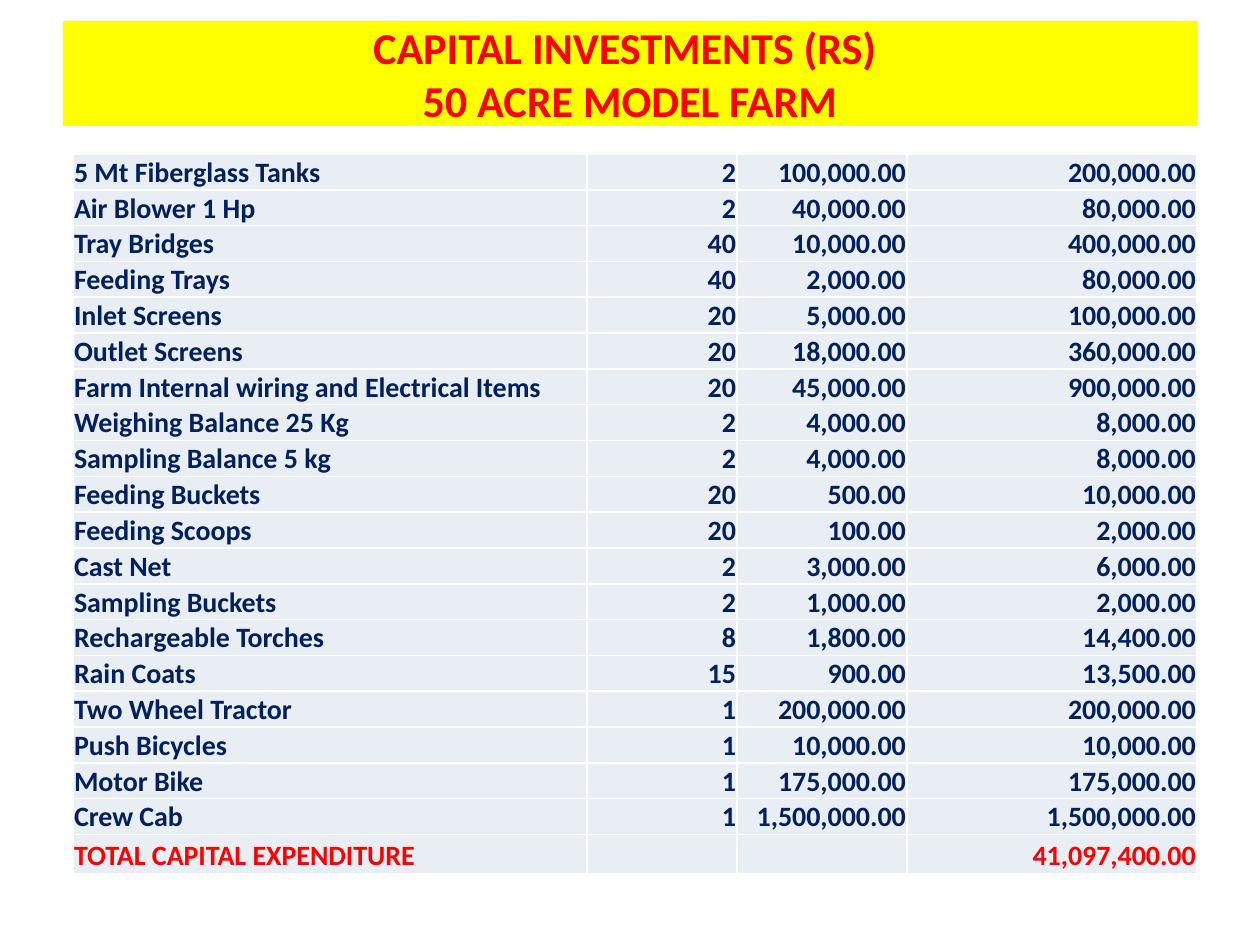
"""Build the capital investments slide for the 50 acre model farm."""
from pptx import Presentation
from pptx.dml.color import RGBColor
from pptx.enum.text import MSO_ANCHOR, PP_ALIGN
from pptx.util import Pt

LEFT, MID, RIGHT = PP_ALIGN.LEFT, PP_ALIGN.CENTER, PP_ALIGN.RIGHT
CENTER, BOTTOM = MSO_ANCHOR.MIDDLE, MSO_ANCHOR.BOTTOM
YELLOW = RGBColor(0xFF, 0xFF, 0x00)
RED = RGBColor(0xFF, 0x00, 0x00)
NAVY = RGBColor(0x00, 0x20, 0x60)
PALE = RGBColor(0xE9, 0xED, 0xF4)
SCALE = 914400 / 126


def px(n):
    return round(n * SCALE)


def style(para, size, color, align):
    para.alignment = align
    for run in para.runs:
        for key, val in {"name": "Calibri", "size": Pt(size), "bold": True}.items():
            setattr(run.font, key, val)
        run.font.color.rgb = color


ROWS = [
    ("5 Mt Fiberglass Tanks", "2", "100,000.00", "200,000.00"),
    ("Air Blower 1 Hp", "2", "40,000.00", "80,000.00"),
    ("Tray Bridges", "40", "10,000.00", "400,000.00"),
    ("Feeding Trays", "40", "2,000.00", "80,000.00"),
    ("Inlet Screens", "20", "5,000.00", "100,000.00"),
    ("Outlet Screens", "20", "18,000.00", "360,000.00"),
    ("Farm Internal wiring and Electrical Items", "20", "45,000.00", "900,000.00"),
    ("Weighing Balance 25 Kg", "2", "4,000.00", "8,000.00"),
    ("Sampling Balance 5 kg", "2", "4,000.00", "8,000.00"),
    ("Feeding Buckets", "20", "500.00", "10,000.00"),
    ("Feeding Scoops", "20", "100.00", "2,000.00"),
    ("Cast Net", "2", "3,000.00", "6,000.00"),
    ("Sampling Buckets", "2", "1,000.00", "2,000.00"),
    ("Rechargeable Torches", "8", "1,800.00", "14,400.00"),
    ("Rain Coats", "15", "900.00", "13,500.00"),
    ("Two Wheel Tractor", "1", "200,000.00", "200,000.00"),
    ("Push Bicycles", "1", "10,000.00", "10,000.00"),
    ("Motor Bike", "1", "175,000.00", "175,000.00"),
    ("Crew Cab", "1", "1,500,000.00", "1,500,000.00"),
    ("TOTAL CAPITAL EXPENDITURE", "", "", "41,097,400.00"),
]
COLS = (514, 150, 170, 290)
LAST = len(ROWS) - 1

deck = Presentation()
deck.slide_width, deck.slide_height = px(1260), px(945)
slide = deck.slides.add_slide(deck.slide_layouts[6])

title = slide.shapes.add_textbox(px(63), px(21), px(1134), px(105))
title.fill.solid()
title.fill.fore_color.rgb = YELLOW
frame = title.text_frame
for key, val in {"word_wrap": True, "vertical_anchor": CENTER,
                 "margin_top": 0, "margin_bottom": 0}.items():
    setattr(frame, key, val)
head = frame.paragraphs[0]
head.text = "CAPITAL INVESTMENTS (RS) \v50 ACRE MODEL FARM"
style(head, 25.2, RED, MID)

table = slide.shapes.add_table(
    len(ROWS), len(COLS), px(73), px(154), px(sum(COLS)), px(719)).table
table.first_row = table.horz_banding = False
for col, width in zip(table.columns, COLS):
    col.width = px(width)

for r, row in enumerate(ROWS):
    table.rows[r].height = px(38) if r == LAST else px(681) // LAST
    for c, text in enumerate(row):
        cell = table.cell(r, c)
        cell.fill.solid()
        cell.fill.fore_color.rgb = PALE
        for key, val in {"vertical_anchor": BOTTOM, "margin_left": px(1),
                         "margin_right": px(1), "margin_top": px(1),
                         "margin_bottom": 0}.items():
            setattr(cell, key, val)
        para = cell.text_frame.paragraphs[0]
        para.add_run().text = text
        style(para, 16, RED if r == LAST else NAVY, RIGHT if c else LEFT)

deck.save("out.pptx")
